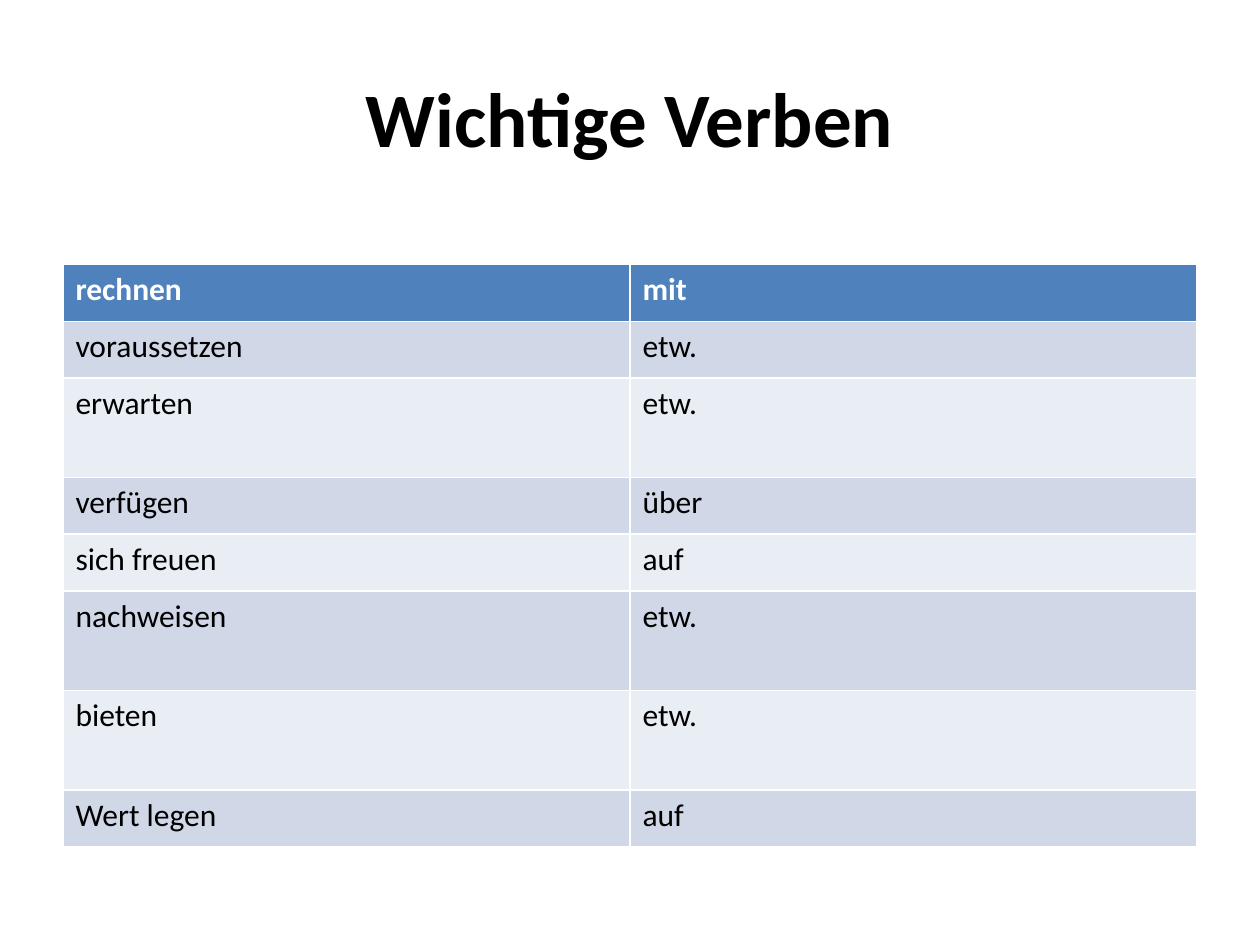
"""Build a slide with a table of important German verbs."""
from pptx import Presentation
from pptx.dml.color import RGBColor
from pptx.enum import text
from pptx import util as u

VERBS = [
    ("rechnen", "mit", 0.45),
    ("voraussetzen", "etw.", 0.45),
    ("erwarten", "etw.", 0.79),
    ("verfügen", "über", 0.45),
    ("sich freuen", "auf", 0.45),
    ("nachweisen", "etw.", 0.79),
    ("bieten", "etw.", 0.79),
    ("Wert legen", "auf", 0.45),
]


def color(value):
    return RGBColor.from_string(value)


class SlideBuilder:
    font = "Calibri"
    black, white = "000000", "FFFFFF"
    header, bands = "4F81BD", ("E9EDF4", "D0D8E8")

    def __init__(self, slide):
        self.slide = slide

    def add_run(self, paragraph, wording, size, shade, bold=False):
        run = paragraph.add_run()
        run.text = wording
        run.font.name = self.font
        run.font.size = u.Pt(size)
        run.font.bold = bold
        run.font.color.rgb = color(shade)

    def add_title(self, wording, left, top, width, height):
        title = self.slide.shapes.title
        title.left, title.top = u.Inches(left), u.Inches(top)
        title.width, title.height = u.Inches(width), u.Inches(height)
        title.text_frame.vertical_anchor = text.MSO_ANCHOR.MIDDLE
        paragraph = title.text_frame.paragraphs[0]
        paragraph.alignment = text.PP_ALIGN.CENTER
        self.add_run(paragraph, wording, 44, self.black, bold=True)

    def add_verb_table(self, verbs, left, top, width):
        height = sum(row_height for _, _, row_height in verbs)
        table = self.slide.shapes.add_table(
            len(verbs), 2, u.Inches(left), u.Inches(top), u.Inches(width), u.Inches(height)
        ).table
        for index, (verb, complement, row_height) in enumerate(verbs):
            table.rows[index].height = u.Inches(row_height)
            is_header = index == 0
            fill = self.header if is_header else self.bands[index % 2]
            shade = self.white if is_header else self.black
            for cell, wording in zip(table.rows[index].cells, (verb, complement)):
                cell.fill.solid()
                cell.fill.fore_color.rgb = color(fill)
                self.add_run(cell.text_frame.paragraphs[0], wording, 18, shade, is_header)


def main():
    presentation = Presentation()
    presentation.slide_width, presentation.slide_height = u.Inches(10), u.Inches(7.5)
    slide = presentation.slides.add_slide(presentation.slide_layouts[5])
    builder = SlideBuilder(slide)
    builder.add_title("Wichtige Verben", 0.5, 0.3, 9, 1.25)
    builder.add_verb_table(VERBS, 0.5, 2.1, 9)
    presentation.save("out.pptx")


if __name__ == "__main__":
    main()
